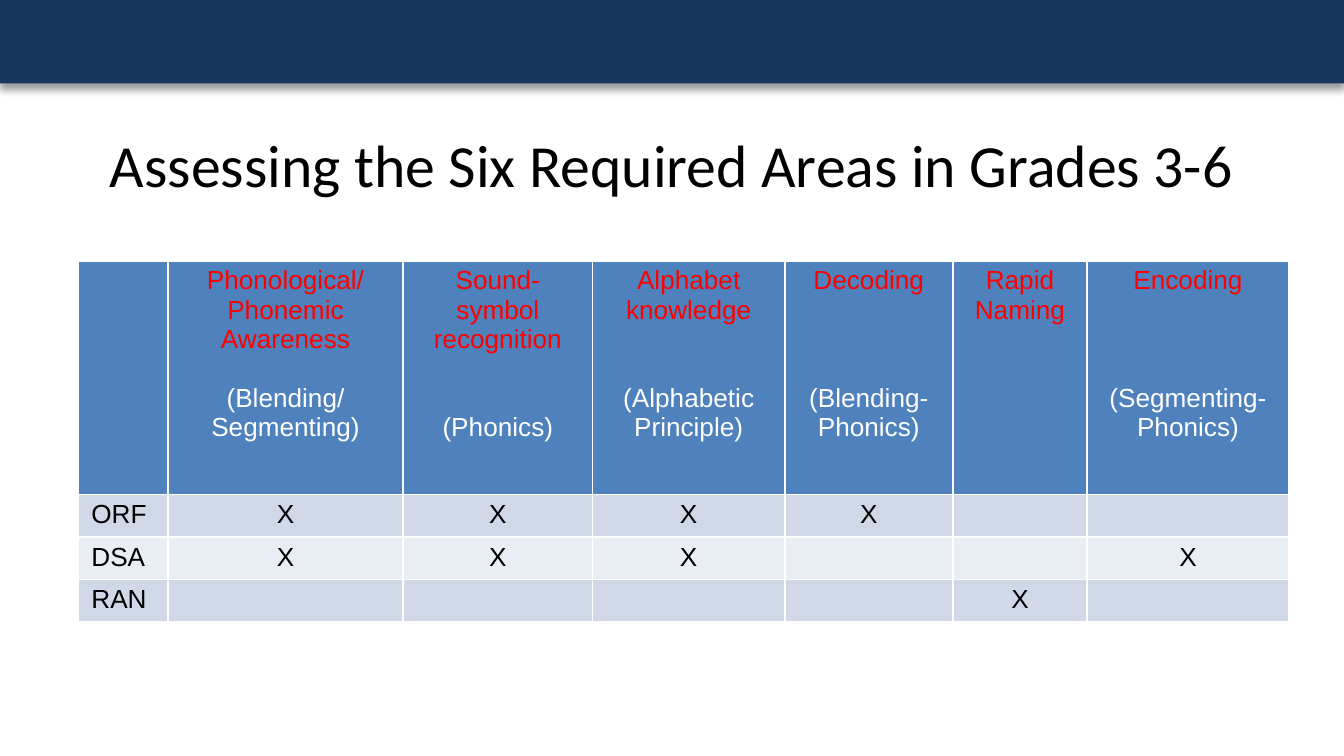
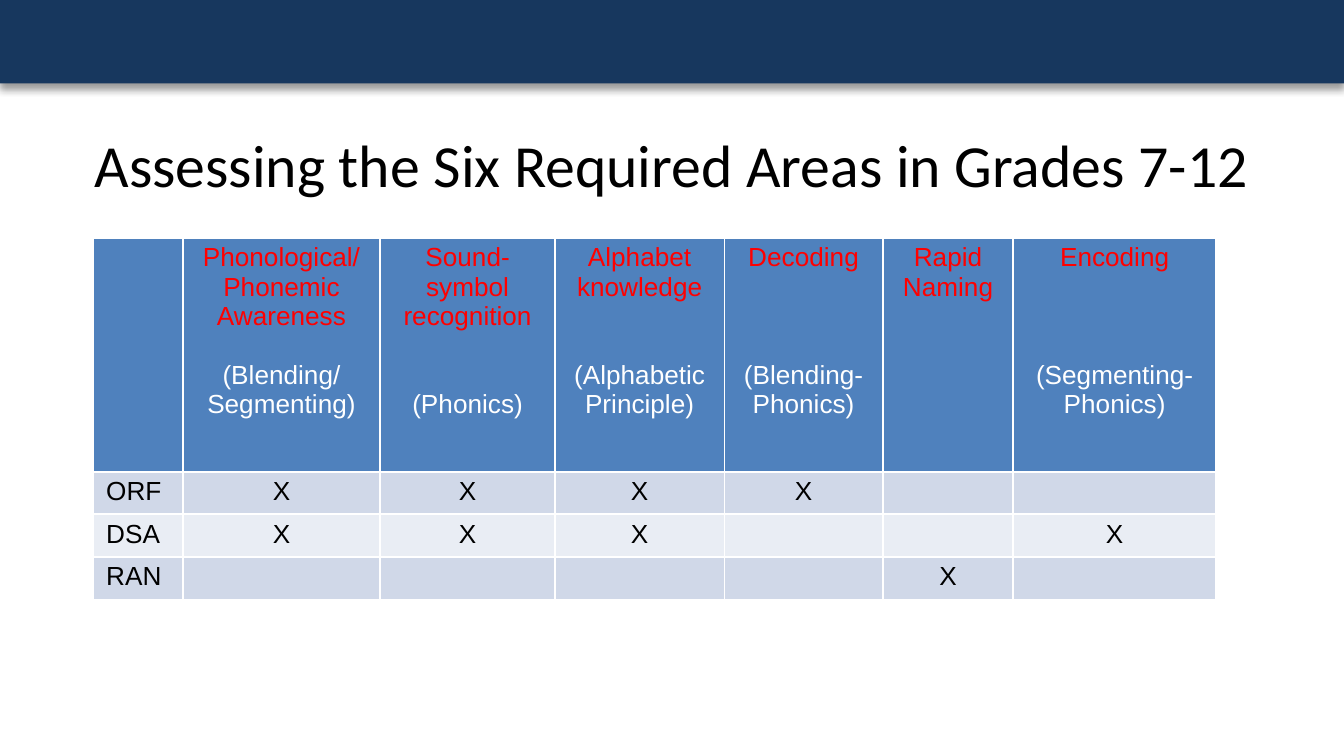
from lxml.etree import SubElement
from pptx import Presentation
from pptx.dml.color import RGBColor
from pptx.enum.shapes import MSO_SHAPE
from pptx.enum.text import MSO_ANCHOR, MSO_AUTO_SIZE, PP_ALIGN
from pptx.oxml.ns import qn
from pptx.util import Inches, Pt

LINE = 15.7

AREAS = [
    ("Phonological/Phonemic Awareness", "(Blending/Segmenting)", 1),
    ("Sound-symbol recognition", "(Phonics)", 2),
    ("Alphabet knowledge", "(Alphabetic Principle)", 2),
    ("Decoding", "(Blending- Phonics)", 3),
    ("Rapid Naming", "", 0),
    ("Encoding", "(Segmenting-Phonics)", 3),
]
TESTS = {"ORF": (1, 2, 3, 4), "DSA": (1, 2, 3, 6), "RAN": (5,)}
GRADES = [
    ("3-6", 0.58, 1.94, (0.67, 1.75, 1.41, 1.43, 1.25, 1, 1.5)),
    ("7-12", 0.69, 1.77, (0.67, 1.47, 1.3, 1.26, 1.18, 0.97, 1.51)),
]


def paint(code):
    return RGBColor.from_string(code)


def write(par, text, size=14, face="Arial", color="000000",
          align=PP_ALIGN.CENTER, before=0):
    par.alignment = align
    par.space_before = Pt(before)
    if not text:
        SubElement(par._p, qn("a:endParaRPr"), sz=str(size * 100))
        return
    run = par.add_run()
    run.text = text
    font = run.font
    font.size, font.name, font.bold = Pt(size), face, False
    font.color.rgb = paint(color)


class Deck:
    navy, blue, red, white = "17375E", "4F81BD", "FF0000", "FFFFFF"
    bands = ("D0D8E8", "E9EDF4")

    def __init__(self):
        self.show = Presentation()
        self.show.slide_width = Inches(10)
        self.show.slide_height = Inches(10 * 9 / 16)
        self.slide = None

    def page(self, title):
        self.slide = self.show.slides.add_slide(self.show.slide_layouts[5])
        self.band()
        self.title(title)

    def band(self):
        bar = self.slide.shapes.add_shape(
            MSO_SHAPE.RECTANGLE, 0, 0, Inches(10), Inches(0.62))
        bar.fill.solid()
        bar.fill.fore_color.rgb = paint(self.navy)
        bar.line.fill.background()
        bar.shadow.inherit = False
        effects = bar._element.spPr.find(qn("a:effectLst"))
        shade = SubElement(effects, qn("a:outerShdw"), blurRad=str(Pt(4)),
                           dist=str(Pt(3)), dir="5400000", rotWithShape="0")
        tint = SubElement(shade, qn("a:srgbClr"), val="000000")
        SubElement(tint, qn("a:alpha"), val="40000")

    def title(self, text):
        box = self.slide.shapes.title
        box.left, box.top = Inches(0.5), Inches(0.75)
        box.width, box.height = Inches(9), Inches(0.94)
        frame = box.text_frame
        frame.word_wrap = True
        frame.auto_size = MSO_AUTO_SIZE.NONE
        frame.vertical_anchor = MSO_ANCHOR.MIDDLE
        frame.margin_left = frame.margin_right = Inches(0.1)
        frame.margin_top = frame.margin_bottom = Inches(0.1)
        write(frame.paragraphs[0], text, size=32, face="Calibri")

    def cell(self, cell, fill):
        props = cell._tc.get_or_add_tcPr()
        for side in "LRTB":
            edge = SubElement(props, qn(f"a:ln{side}"), w=str(Pt(1)))
            solid = SubElement(edge, qn("a:solidFill"))
            SubElement(solid, qn("a:srgbClr"), val=self.white)
        cell.fill.solid()
        cell.fill.fore_color.rgb = paint(fill)
        cell.margin_left = cell.margin_right = Inches(0.1)
        cell.margin_top = cell.margin_bottom = Inches(0.04)
        return cell.text_frame

    def table(self, left, top, widths):
        heights = [1.74] + [0.31] * len(TESTS)
        grid = self.slide.shapes.add_table(
            len(heights), len(widths), Inches(left), Inches(top),
            Inches(sum(widths)), Inches(sum(heights))).table
        for col, width in zip(grid.columns, widths):
            col.width = Inches(width)
        for row, height in zip(grid.rows, heights):
            row.height = Inches(height)
        for col, (area, skill, gap) in enumerate([("", "", 0)] + AREAS):
            frame = self.cell(grid.cell(0, col), self.blue)
            write(frame.paragraphs[0], area, color=self.red)
            if skill:
                write(frame.add_paragraph(), skill, color=self.white,
                      before=gap * LINE)
        for row, (test, marks) in enumerate(TESTS.items(), 1):
            fill = self.bands[(row - 1) % 2]
            for col in range(len(widths)):
                par = self.cell(grid.cell(row, col), fill).paragraphs[0]
                if col == 0:
                    write(par, test, align=PP_ALIGN.LEFT)
                else:
                    write(par, "X" if col in marks else "")


def main():
    deck = Deck()
    for grade, left, top, widths in GRADES:
        deck.page(f"Assessing the Six Required Areas in Grades {grade}")
        deck.table(left, top, widths)
    deck.show.save("out.pptx")


if __name__ == "__main__":
    main()
